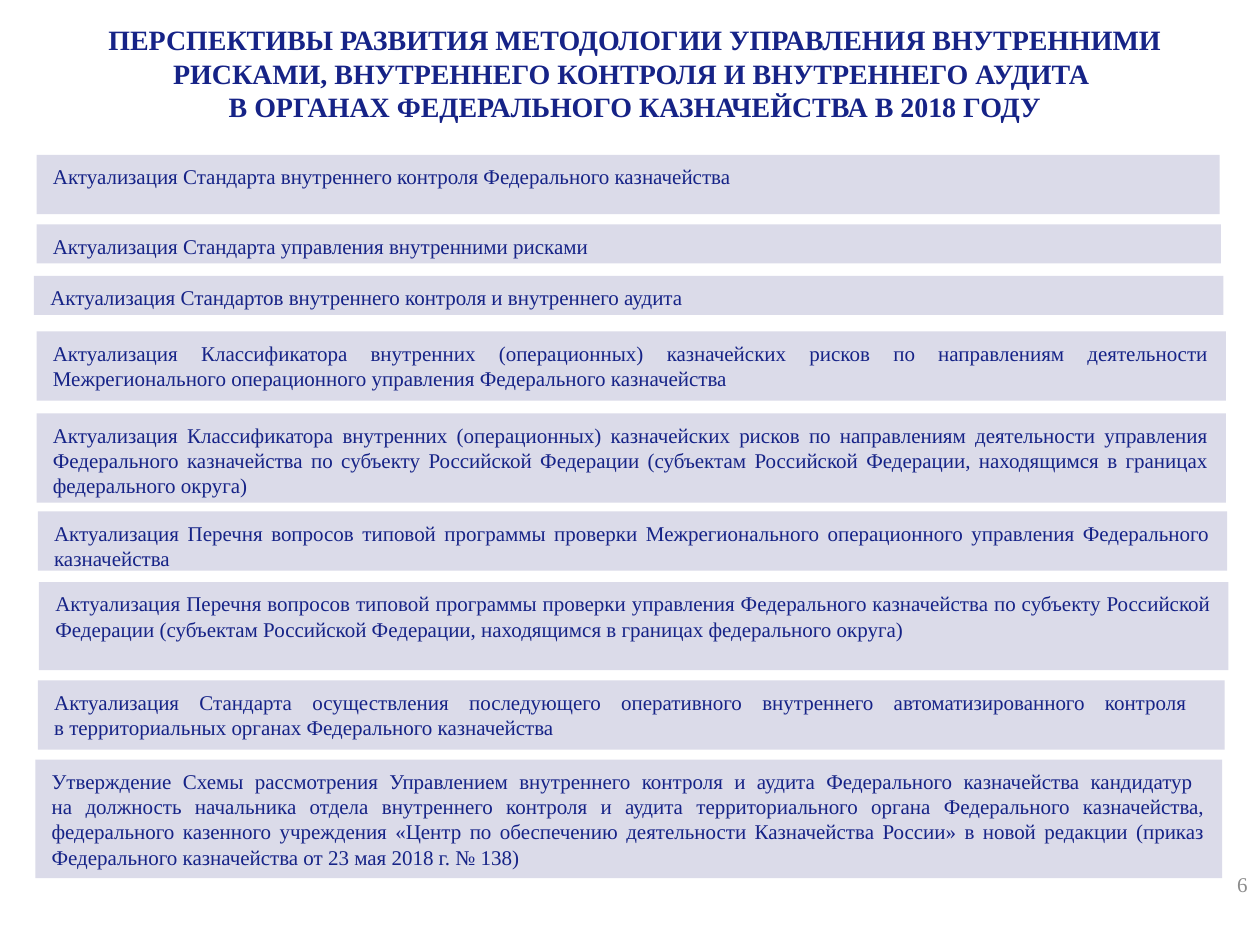
import copy

import pptx
import pptx.dml.color
import pptx.enum.shapes
import pptx.enum.text
import pptx.util

Inches = pptx.util.Inches
ALIGN = pptx.enum.text.PP_ALIGN
ANCHOR = pptx.enum.text.MSO_ANCHOR

THEME = {
    "font": "Times New Roman",
    "navy": "162387",
    "bar": "DBDBE9",
    "gray": "8C8C8C",
    "title_size": 16,
    "text_size": 12,
}


def color(name):
    return pptx.dml.color.RGBColor.from_string(THEME[name])


def write(shape, text, size="text_size", ink="navy", bold=False,
          align=ALIGN.JUSTIFY, anchor=ANCHOR.TOP, insets=(0.1, 0.05), after=0):
    frame = shape.text_frame
    frame.word_wrap = True
    frame.auto_size = pptx.enum.text.MSO_AUTO_SIZE.NONE
    frame.vertical_anchor = anchor
    frame.margin_left = frame.margin_right = Inches(insets[0])
    frame.margin_top = frame.margin_bottom = Inches(insets[1])
    paragraph = frame.paragraphs[0]
    paragraph.text = text
    paragraph.alignment = align
    paragraph.space_before = pptx.util.Pt(0)
    paragraph.space_after = pptx.util.Pt(after)
    for run in paragraph.runs:
        run.font.name = THEME["font"]
        run.font.size = pptx.util.Pt(THEME[size])
        run.font.bold = bold
        run.font.color.rgb = color(ink)
    # Line breaks take the size of the text around them
    for line_break in paragraph._p.findall(pptx.oxml.ns.qn("a:br")):
        line_break.append(copy.deepcopy(paragraph.runs[0]._r.rPr))


presentation = pptx.Presentation()
presentation.slide_width = Inches(10)
presentation.slide_height = Inches(7.5)
slide = presentation.slides.add_slide(presentation.slide_layouts[5])

# Title
title = slide.shapes.title
title.left, title.top = Inches(0.55), Inches(0.13)
title.width, title.height = Inches(8.98), Inches(0.62)
write(title,
      "ПЕРСПЕКТИВЫ РАЗВИТИЯ МЕТОДОЛОГИИ УПРАВЛЕНИЯ ВНУТРЕННИМИ РИСКАМИ, "
      "ВНУТРЕННЕГО КОНТРОЛЯ И ВНУТРЕННЕГО АУДИТА \n"
      "В ОРГАНАХ ФЕДЕРАЛЬНОГО КАЗНАЧЕЙСТВА В 2018 ГОДУ",
      size="title_size", bold=True, align=ALIGN.CENTER)

# Planned measures: left, top, width, height, space after, text
measures = [
    (0.29, 1.23, 9.39, 0.47, 8,
     "Актуализация Стандарта внутреннего контроля Федерального казначейства"),
    (0.29, 1.78, 9.4, 0.31, 8,
     "Актуализация Стандарта управления внутренними рисками"),
    (0.27, 2.19, 9.44, 0.31, 8,
     "Актуализация Стандартов внутреннего контроля и внутреннего аудита"),
    (0.29, 2.63, 9.44, 0.55, 8,
     "Актуализация Классификатора внутренних (операционных) казначейских рисков "
     "по направлениям деятельности Межрегионального операционного управления "
     "Федерального казначейства"),
    (0.29, 3.28, 9.44, 0.71, 8,
     "Актуализация Классификатора внутренних (операционных) казначейских рисков "
     "по направлениям деятельности управления Федерального казначейства по субъекту "
     "Российской Федерации (субъектам Российской Федерации, находящимся в границах "
     "федерального округа)"),
    (0.3, 4.06, 9.44, 0.47, 8,
     "Актуализация Перечня вопросов типовой программы проверки Межрегионального "
     "операционного управления Федерального казначейства"),
    (0.31, 4.62, 9.44, 0.7, 8,
     "Актуализация Перечня вопросов типовой программы проверки управления "
     "Федерального казначейства по субъекту Российской Федерации (субъектам "
     "Российской Федерации, находящимся в границах федерального округа)"),
    (0.3, 5.4, 9.42, 0.55, 0,
     "Актуализация Стандарта осуществления последующего оперативного внутреннего "
     "автоматизированного контроля \n"
     "в территориальных органах Федерального казначейства"),
    (0.28, 6.03, 9.42, 0.94, 0,
     "Утверждение Схемы рассмотрения Управлением внутреннего контроля и аудита "
     "Федерального казначейства кандидатур \n"
     "на должность начальника отдела внутреннего контроля и аудита территориального "
     "органа Федерального казначейства, федерального казенного учреждения «Центр по "
     "обеспечению деятельности Казначейства России» в новой редакции (приказ "
     "Федерального казначейства от 23 мая 2018 г. № 138)"),
]
for left, top, width, height, after, text in measures:
    bar = slide.shapes.add_shape(
        pptx.enum.shapes.MSO_SHAPE.RECTANGLE,
        Inches(left), Inches(top), Inches(width), Inches(height))
    bar.shadow.inherit = False
    bar.fill.solid()
    bar.fill.fore_color.rgb = color("bar")
    bar.line.fill.background()
    write(bar, text, insets=(0.13, 0.07), after=after)

# Page number
page_number = slide.shapes.add_textbox(
    Inches(7.67), Inches(6.82), Inches(2.33), Inches(0.4))
write(page_number, "6", ink="gray", align=ALIGN.RIGHT, anchor=ANCHOR.MIDDLE)

presentation.save("out.pptx")
